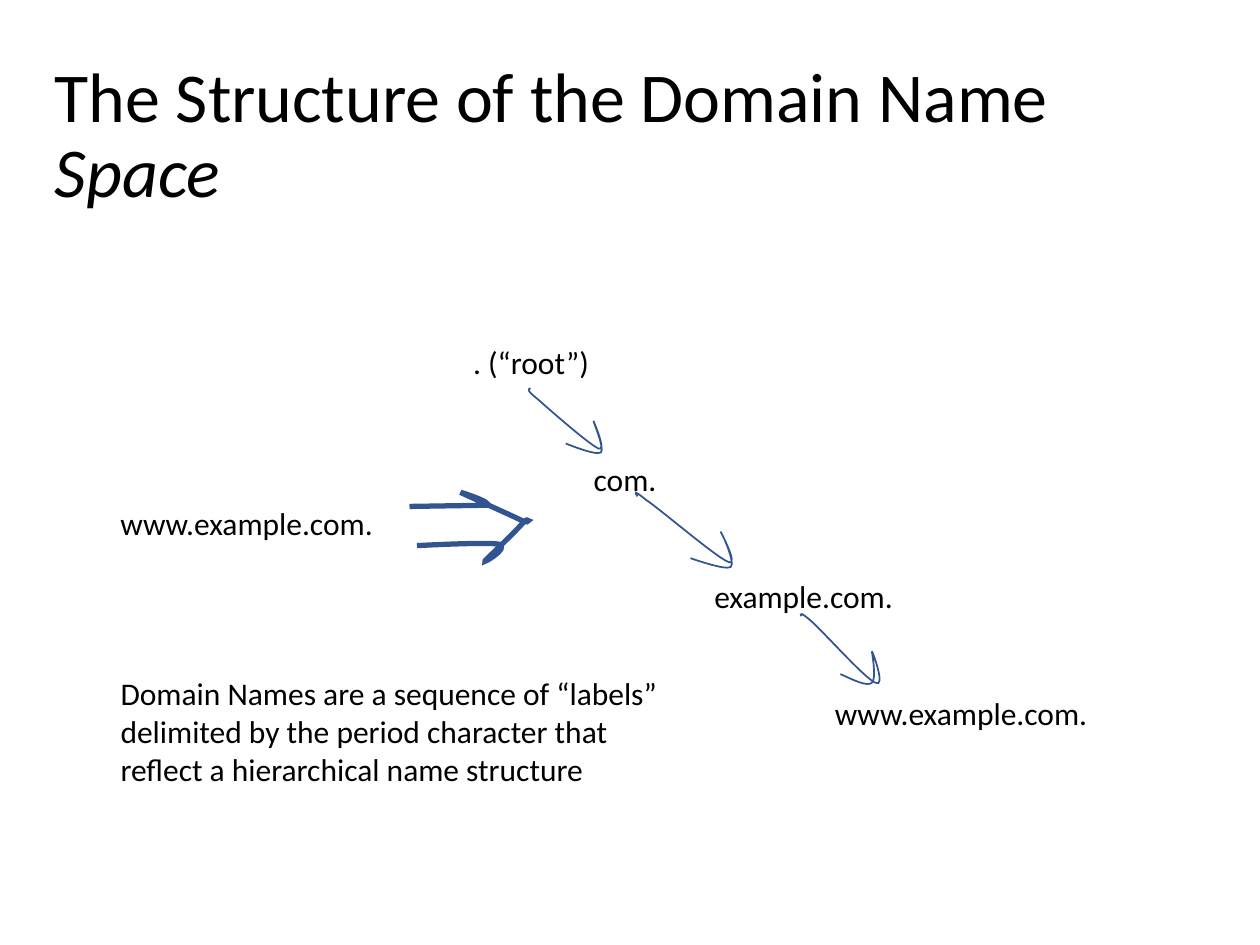
from lxml import etree
from pptx import Presentation
from pptx.dml.color import RGBColor
from pptx.enum import text as t
from pptx.oxml.ns import qn
from pptx.util import Pt

FONT, INK, BLUE = "Calibri", "000000", "325491"

# Content
TITLE = [("The Structure of the Domain Name ", False), ("Space", True)]
NAME = "www.example.com."
NOTE = ("Domain Names are a sequence of “labels” delimited by the period "
        "character that reflect a hierarchical name structure")
LEVELS = [". (“root”)", "com.", "example.com.", NAME]

# Hand-drawn strokes: line width, box, start point, then curves of two
# control points and an end point, or lines of an end point, in points
STROKES = [
    (1, (302.4, 221.8, 41.8, 36.7), (303.1, 221.8), [
        (301.7, 222.5, 301, 223.2, 307.4, 228.2),
        (313.9, 234, 337, 254.2, 342, 256.3),
        (347, 258.5, 339.1, 240.5, 339.1, 240.5),
        (339.1, 241.2, 345.6, 256.3, 343.4, 258.5),
        (340.6, 260.6, 323.3, 253.4, 323.3, 253.4)]),
    (1, (362.9, 281.5, 55.4, 43.2), (364.3, 283.7), [
        (362.9, 281.5, 361.4, 279.4, 369.4, 285.8),
        (378, 291.6, 409, 318.2, 416.2, 321.1),
        (422.6, 324, 411.8, 303.8, 411.8, 303.8),
        (412.6, 304.6, 420.5, 321.8, 417.6, 324),
        (414.7, 326.2, 394.6, 319, 394.6, 319)]),
    (1, (457.9, 351.4, 44.6, 39.6), (457.9, 352.1), [
        (457.2, 350.6, 457.2, 349.2, 464.4, 355.7),
        (471.6, 362.2, 494.6, 388.1, 500.4, 390.2),
        (506.2, 393.1, 499, 373, 498.2, 372.2),
        (498.2, 372.2, 501.1, 388.1, 498.2, 390.2),
        (495.4, 392.4, 488.2, 388.8, 480.2, 385.2)]),
    (3, (234, 281.5, 68.4, 39.6), (234, 289.4), [
        (277.9, 288.7),
        (283, 287.3, 259.9, 280.1, 263.5, 281.5),
        (266.4, 283, 292.3, 294.5, 298.1, 297.4),
        (303.8, 300.2, 302.4, 294.5, 298.8, 298.8),
        (295.9, 302.4, 279.4, 318.2, 277.2, 320.4),
        (275, 322.6, 291.6, 313.2, 285.1, 311),
        (278.6, 309.6, 238.3, 311.8, 238.3, 311.8)]),
]


def color(code):
    return RGBColor.from_string(code)


def place(shape, x, y, w, h):
    shape.left, shape.top, shape.width, shape.height = map(Pt, (x, y, w, h))


def write(para, words, size=18, italic=None):
    run = para.add_run()
    run.text = words
    font = run.font
    font.name, font.size, font.italic = FONT, Pt(size), italic
    font.color.rgb = color(INK)


def label(words, x, y, w, h=29, wrap=True):
    box = slide.shapes.add_textbox(Pt(x), Pt(y), Pt(w), Pt(h))
    frame = box.text_frame
    frame.word_wrap = wrap
    frame.auto_size = t.MSO_AUTO_SIZE.SHAPE_TO_FIT_TEXT
    write(frame.paragraphs[0], words)


def stroke(width, box, start, bends):
    pen = slide.shapes.build_freeform(*map(Pt, start))
    pen.add_line_segments([tuple(map(Pt, b[-2:])) for b in bends], close=False)
    shape = pen.convert_to_shape()
    place(shape, *box)
    shape.shadow.inherit = False
    shape.fill.background()
    shape.line.color.rgb = color(BLUE)
    shape.line.width = Pt(width)
    etree.SubElement(shape.line._get_or_add_ln(), qn("a:miter"), lim="800000")

    # Redraw the outline with true curves, relative to the box
    track = shape._element.find(".//" + qn("a:path"))
    track.set("w", str(shape.width))
    track.set("h", str(shape.height))
    for node in list(track):
        track.remove(node)
    for step in [start] + bends:
        kind = "cubicBezTo" if len(step) == 6 else "lnTo"
        node = etree.SubElement(
            track, qn("a:moveTo" if step is start else "a:" + kind))
        for x, y in zip(step[::2], step[1::2]):
            etree.SubElement(node, qn("a:pt"), x=str(Pt(x) - shape.left),
                             y=str(Pt(y) - shape.top))


deck = Presentation()
deck.slide_width, deck.slide_height = Pt(720), Pt(540)
slide = deck.slides.add_slide(deck.slide_layouts[5])

# Title
head = slide.shapes.title
place(head, 24, 26.4, 684, 104.4)
head.text_frame.vertical_anchor = t.MSO_ANCHOR.MIDDLE
head.text_frame.auto_size = t.MSO_AUTO_SIZE.NONE
para = head.text_frame.paragraphs[0]
para.alignment = t.PP_ALIGN.LEFT
para.line_spacing = 0.9
for words, slant in TITLE:
    write(para, words, size=40, italic=slant)

# Full name and explanation
label(NAME, 61.8, 284.4, 160, wrap=False)
label(NOTE, 61.8, 381.6, 339, h=72.7)

# Hierarchy, stepping down to the right
for i, words in enumerate(LEVELS):
    label(words, 263.3 + 68.9 * i, 192.7 + 66.8 * i,
          210 if words == NAME else 172.8)

# Arrows
for parts in STROKES:
    stroke(*parts)

deck.save("out.pptx")
